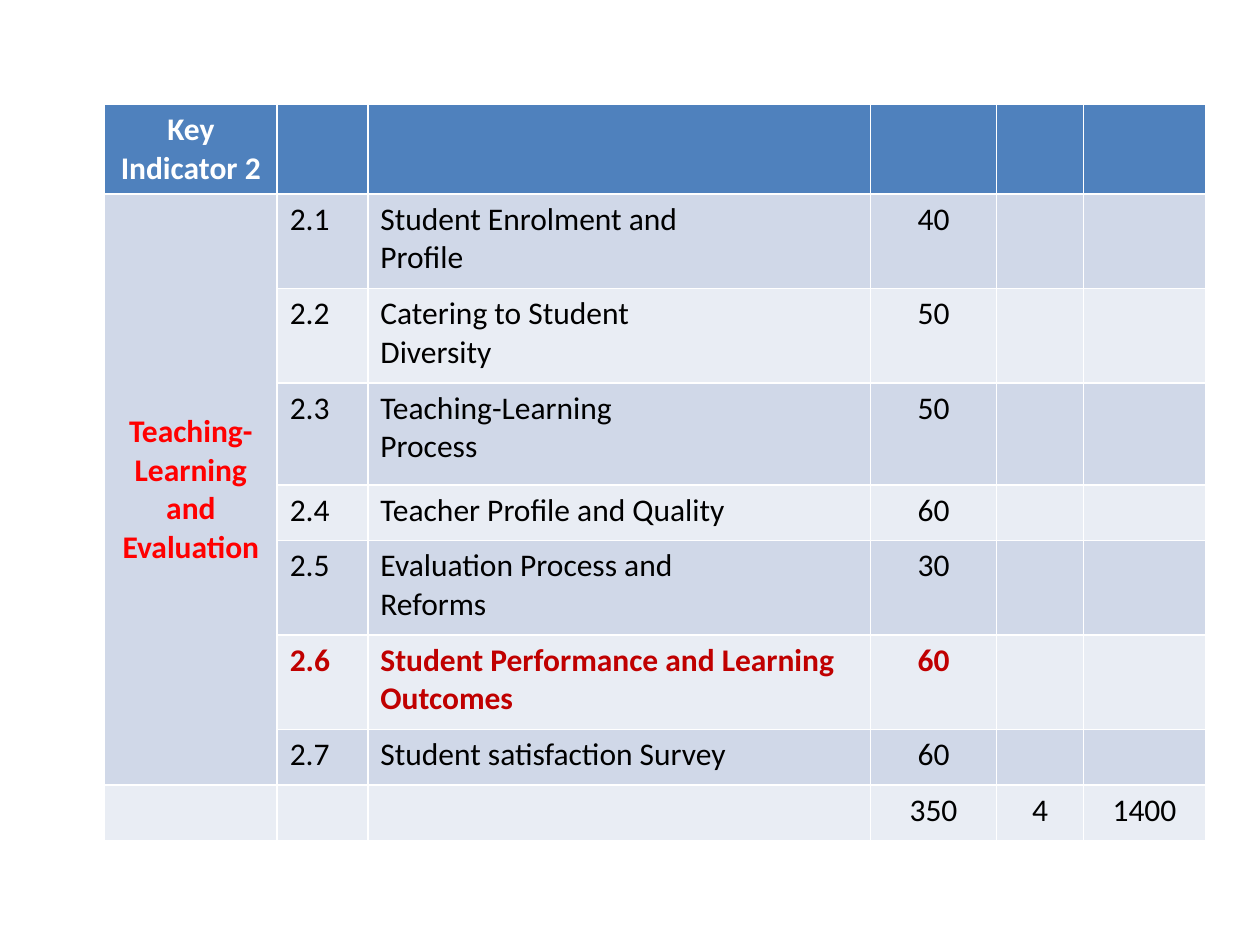
"""Build a slide with the marks table for Key Indicator 2."""
from pptx import Presentation
from pptx.dml.color import RGBColor
from pptx.enum.text import MSO_ANCHOR as Anchor, PP_ALIGN as Align
from pptx.util import Inches, Pt


def color(value):
    return RGBColor.from_string(value)


def write(cell, text, align, font_color, bold):
    cell.text = text
    font_format = {"name": "Calibri", "size": Pt(18), "bold": bold}
    for paragraph in cell.text_frame.paragraphs:
        paragraph.alignment = align
        for name, value in font_format.items():
            setattr(paragraph.font, name, value)
            for run in paragraph.runs:
                setattr(run.font, name, value)
        for run in paragraph.runs:
            run.font.color.rgb = color(font_color)


presentation = Presentation()
presentation.slide_width = Inches(10)
presentation.slide_height = Inches(7.5)
slide = presentation.slides.add_slide(presentation.slide_layouts[6])

column_widths = [1.37, 0.72, 3.99, 1, 0.69, 0.97]
row_heights = [0.7, 0.75, 0.75, 0.81, 0.44, 0.75, 0.75, 0.44, 0.44]
rows = [
    ["Key Indicator 2", "", "", "", "", ""],
    ["Teaching- Learning and Evaluation", "2.1", "Student Enrolment and\nProfile", "40", "", ""],
    ["", "2.2", "Catering to Student\nDiversity", "50", "", ""],
    ["", "2.3", "Teaching-Learning\nProcess", "50", "", ""],
    ["", "2.4", "Teacher Profile and Quality", "60", "", ""],
    ["", "2.5", "Evaluation Process and\nReforms", "30", "", ""],
    ["", "2.6", "Student Performance and Learning Outcomes", "60", "", ""],
    ["", "2.7", "Student satisfaction Survey", "60", "", ""],
    ["", "", "", "350", "4", "1400"],
]

table = slide.shapes.add_table(
    len(rows), len(column_widths), Inches(0.83), Inches(0.83),
    Inches(sum(column_widths)), Inches(sum(row_heights))).table
for column, width in zip(table.columns, column_widths):
    column.width = Inches(width)
for row, height in zip(table.rows, row_heights):
    row.height = Inches(height)

bands = ["E9EDF4", "D0D8E8"]
row_styles = {0: ("FFFFFF", True), 6: ("C00000", True)}
for row_index, texts in enumerate(rows):
    fill_color = bands[row_index % 2] if row_index else "4F81BD"
    font_color, bold = row_styles.get(row_index, ("000000", False))
    for column_index, text in enumerate(texts):
        cell = table.cell(row_index, column_index)
        cell.fill.solid()
        cell.fill.fore_color.rgb = color(fill_color)
        align = Align.LEFT if column_index in (1, 2) else Align.CENTER
        write(cell, text, align, font_color, bold)

heading = table.cell(1, 0)
write(heading, rows[1][0], Align.CENTER, "FF0000", True)
heading.merge(table.cell(7, 0))
heading.vertical_anchor = Anchor.MIDDLE

presentation.save("out.pptx")
